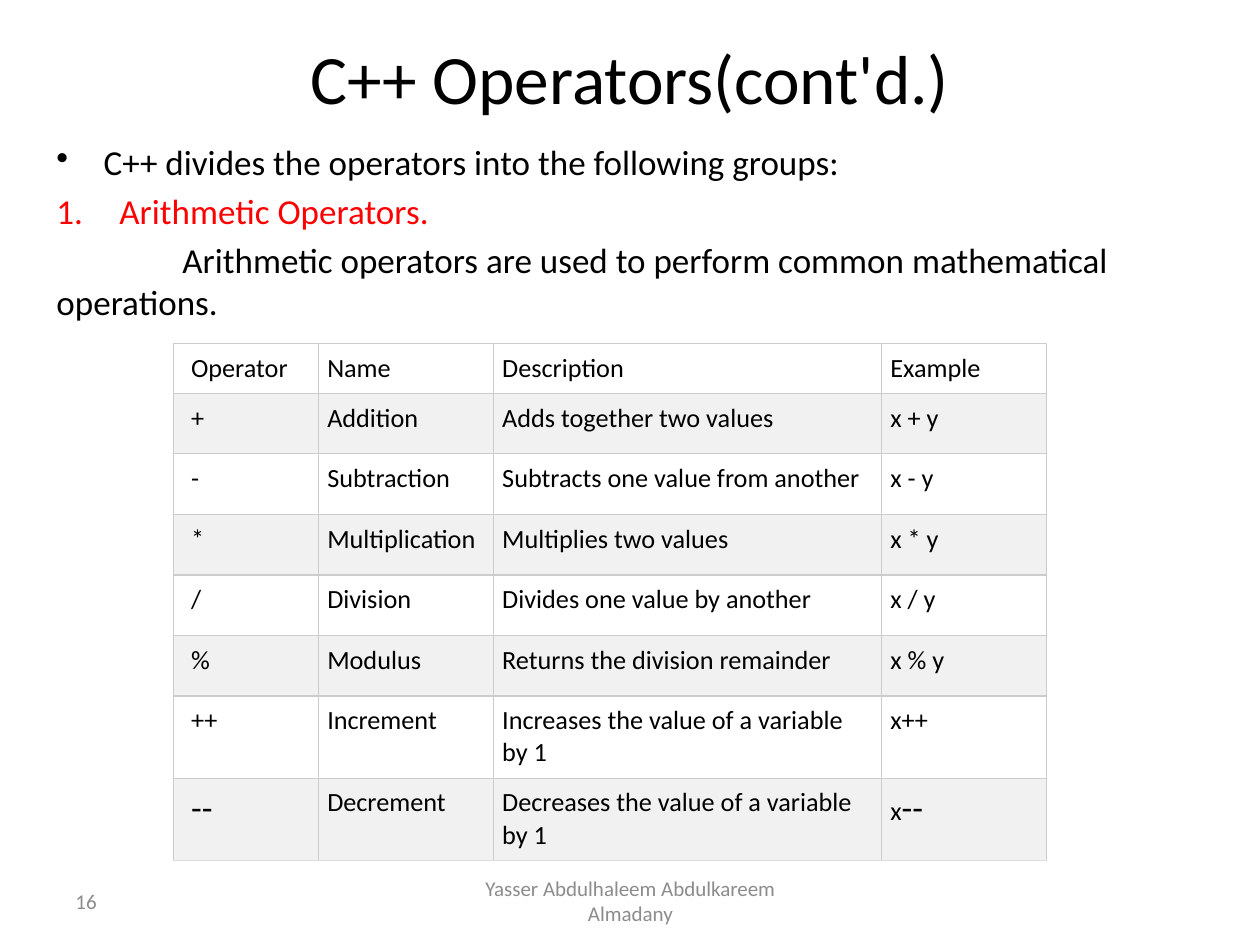
from lxml import etree
from pptx import Presentation
from pptx import util as u
from pptx.dml.color import RGBColor
from pptx.enum import text
from pptx.oxml import ns

COLORS = {"ink": "000000", "accent": "FF0000", "footer": "8C8C8C", "plain": "FFFFFF",
          "band": "F1F1F1", "border": "CCCCCC", "bottom": "DDDDDD"}


def set_font(font, size, color="ink"):
    font.name = "Calibri"
    font.size = u.Pt(size)
    font.color.rgb = RGBColor.from_string(COLORS[color])


def add_text_box(left, top, width, height, anchor):
    frame = slide.shapes.add_textbox(u.Pt(left), u.Pt(top), u.Pt(width), u.Pt(height)).text_frame
    frame.word_wrap = True
    frame.vertical_anchor = anchor
    return frame


presentation = Presentation()
presentation.slide_width, presentation.slide_height = u.Pt(720), u.Pt(540)
slide = presentation.slides.add_slide(presentation.slide_layouts[5])

title = slide.shapes.title
title.left, title.top, title.width, title.height = u.Pt(36), u.Pt(21.6), u.Pt(648), u.Pt(44)
title.text_frame.text = "C++ Operators(cont'd.)"
title.text_frame.vertical_anchor = text.MSO_ANCHOR.MIDDLE
title.text_frame.paragraphs[0].alignment = text.PP_ALIGN.CENTER
set_font(title.text_frame.paragraphs[0].font, 39.6)

body = add_text_box(25.2, 77, 674.6, 414, text.MSO_ANCHOR.TOP)
points = [
    ("C++ divides the operators into the following groups:", "ink", 27, -27, "buChar", {"char": "•"}),
    ("Arithmetic Operators.", "accent", 36, -36, "buAutoNum", {"type": "arabicPeriod"}),
    ("Arithmetic operators are used to perform common mathematical operations.", "ink", 0, 72, "buNone", {}),
]
for index, (wording, color, margin, indent, bullet, attributes) in enumerate(points):
    paragraph = body.add_paragraph() if index else body.paragraphs[0]
    paragraph.text = wording
    paragraph.space_before = u.Pt(4)
    properties = paragraph._p.get_or_add_pPr()
    properties.set("marL", str(u.Pt(margin)))
    properties.set("indent", str(u.Pt(indent)))
    etree.SubElement(properties, ns.qn("a:" + bullet), attributes)
    set_font(paragraph.font, 20, color)

footers = [
    (246.2, 228.2, "Yasser Abdulhaleem Abdulkareem Almadany", text.PP_ALIGN.CENTER),
    (36, 168, "16", text.PP_ALIGN.LEFT),
]
for left, width, wording, alignment in footers:
    footer = add_text_box(left, 500.4, width, 28.8, text.MSO_ANCHOR.MIDDLE)
    paragraph = footer.paragraphs[0]
    paragraph.text = wording
    paragraph.alignment = alignment
    set_font(paragraph.font, 12, "footer")

rows = [
    ("Operator", "Name", "Description", "Example"),
    ("+", "Addition", "Adds together two values", "x + y"),
    ("-", "Subtraction", "Subtracts one value from another", "x - y"),
    ("*", "Multiplication", "Multiplies two values", "x * y"),
    ("/", "Division", "Divides one value by another", "x / y"),
    ("%", "Modulus", "Returns the division remainder", "x % y"),
    ("++", "Increment", "Increases the value of a variable by 1", "x++"),
    ("--", "Decrement", "Decreases the value of a variable by 1", "x--"),
]
column_widths = [82.8, 100, 221.8, 94.4]
row_heights = [28.4] + [34.6] * 5 + [47] * 2
table = slide.shapes.add_table(len(rows), len(column_widths), u.Pt(99.2), u.Pt(196.4),
                               u.Pt(sum(column_widths)), u.Pt(sum(row_heights))).table
for column, width in zip(table.columns, column_widths):
    column.width = u.Pt(width)
for row, height in zip(table.rows, row_heights):
    row.height = u.Pt(height)

for row_index, row in enumerate(rows):
    for column_index, wording in enumerate(row):
        cell = table.cell(row_index, column_index)
        cell.margin_left = u.Pt(5 if column_index else 10)
        cell.margin_top = cell.margin_right = cell.margin_bottom = u.Pt(5)
        last_row = row_index == len(rows) - 1
        for side in ("lnL", "lnR", "lnT", "lnB"):
            border = etree.SubElement(cell._tc.get_or_add_tcPr(), ns.qn("a:" + side), w=str(u.Pt(0.75)))
            fill = etree.SubElement(border, ns.qn("a:solidFill"))
            color = "bottom" if last_row and side == "lnB" else "border"
            etree.SubElement(fill, ns.qn("a:srgbClr"), val=COLORS[color])
        cell.fill.solid()
        cell.fill.fore_color.rgb = RGBColor.from_string(COLORS["band" if row_index % 2 else "plain"])
        paragraph = cell.text_frame.paragraphs[0]
        pieces = ["x", "--"] if wording == "x--" else [wording]
        for piece in pieces:
            run = paragraph.add_run()
            run.text = piece
            set_font(run.font, 20 if piece == "--" else 15)
            run.font.bold = False

presentation.save("out.pptx")
